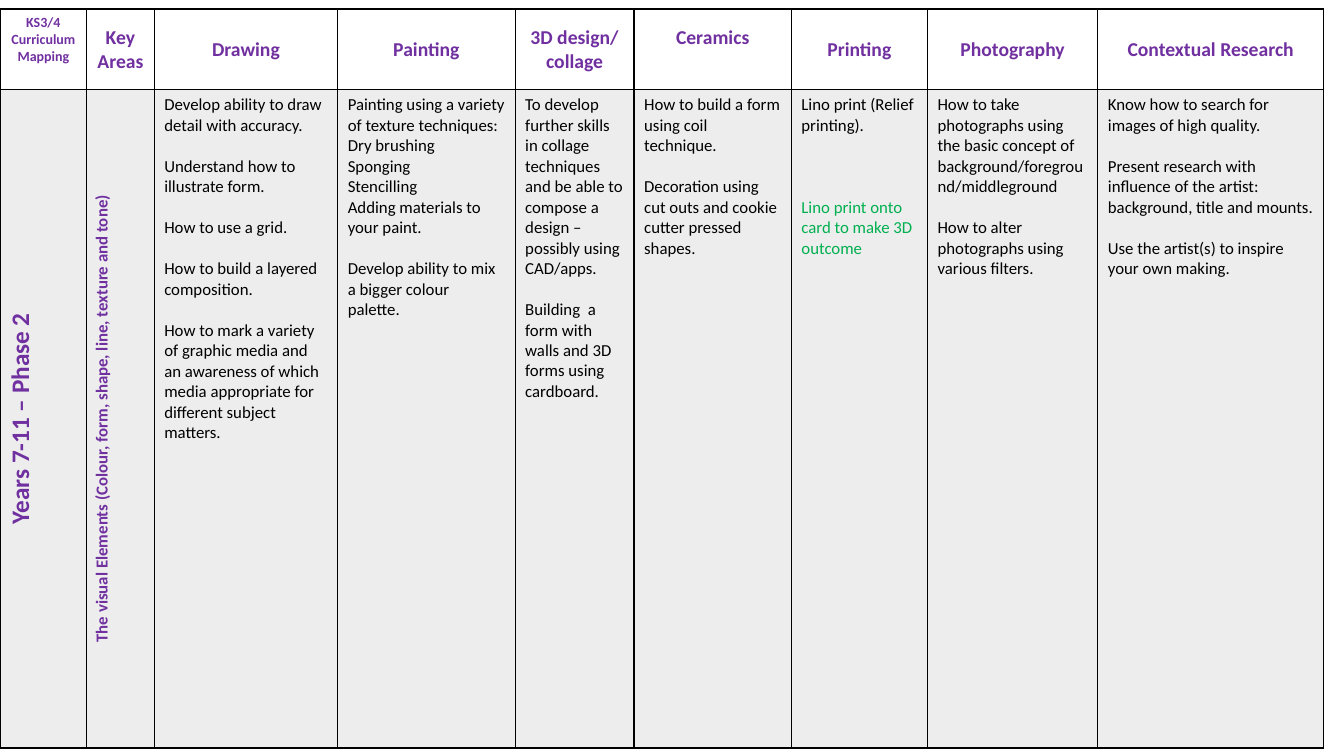
from dataclasses import dataclass

from lxml import etree
from pptx import Presentation
from pptx import util as u
from pptx.dml.color import RGBColor
from pptx.enum import text
from pptx.oxml import ns


@dataclass(frozen=True)
class Theme:
    font: str = "Calibri"
    heading: str = "7030A0"
    body: str = "000000"
    extension: str = "00B050"
    shade: str = "A5A5A5"
    shade_alpha: int = 20
    border: str = "000000"
    border_width: float = 1
    corner_size: int = 10
    body_size: int = 12
    area_size: int = 14
    phase_size: int = 18
    line_gap: float = 14.65


THEME = Theme()

COLUMN_WIDTHS = [0.86, 0.67, 1.82, 1.76, 1.18, 1.56, 1.35, 1.69, 2.24]
ROW_HEIGHTS = [0.8, 6.53]

CORNER = "KS3/4 Curriculum Mapping"
HEADINGS = ["Key Areas", "Drawing", "Painting", "3D design/ collage", "Ceramics",
            "Printing", "Photography", "Contextual Research"]
PHASE = "Years 7-11 – Phase 2"
VISUAL_ELEMENTS = "The visual Elements (Colour, form, shape, line, texture and tone)"

# One list per area; each inner list is a group of lines set apart by a gap
SKILLS = [
    [["Develop ability to draw detail with accuracy."],
     ["Understand how to illustrate form."],
     ["How to use a grid."],
     ["How to build a layered composition."],
     ["How to mark a variety of graphic media and an awareness of which media "
      "appropriate for different subject matters."]],
    [["Painting using a variety of texture techniques:", "Dry brushing", "Sponging",
      "Stencilling", "Adding materials to your paint."],
     ["Develop ability to mix a bigger colour palette."]],
    [["To develop further skills in collage techniques and be able to compose a "
      "design – possibly using CAD/apps."],
     ["Building  a form with walls and 3D forms using cardboard."]],
    [["How to build a form using coil technique."],
     ["Decoration using cut outs and cookie cutter pressed shapes."]],
    [["Lino print (Relief printing)."]],
    [["How to take photographs using the basic concept of "
      "background/foreground/middleground"],
     ["How to alter photographs using various filters."]],
    [["Know how to search for images of high quality."],
     ["Present research with influence of the artist: background, title and mounts."],
     ["Use the artist(s) to inspire your own making."]],
]
PRINTING_EXTENSION = "Lino print onto card to make 3D outcome"


def write_line(cell, words, size, color, bold=False, centred=False, gap=0):
    """Fill the cell's first paragraph, or add one below its text."""
    frame = cell.text_frame
    line = frame.add_paragraph() if frame.text else frame.paragraphs[0]
    line.alignment = text.PP_ALIGN.CENTER if centred else text.PP_ALIGN.LEFT
    line.space_before = u.Pt(gap)
    run = line.add_run()
    run.text = words
    run.font.name = THEME.font
    run.font.size = u.Pt(size)
    run.font.bold = bold
    run.font.color.rgb = RGBColor.from_string(color)


def write_heading(cell, words, size, anchor=text.MSO_ANCHOR.MIDDLE):
    cell.vertical_anchor = anchor
    write_line(cell, words, size, THEME.heading, bold=True, centred=True)


def write_sideways(cell, words, size):
    write_heading(cell, words, size)
    cell._tc.get_or_add_tcPr().set("vert", "vert270")


def write_skills(cell, groups):
    for group_index, group in enumerate(groups):
        for line_index, words in enumerate(group):
            starts_group = group_index > 0 and line_index == 0
            write_line(cell, words, THEME.body_size, THEME.body,
                       gap=THEME.line_gap if starts_group else 0)


def shade(cell):
    cell.fill.solid()
    cell.fill.fore_color.rgb = RGBColor.from_string(THEME.shade)
    color = cell._tc.tcPr.find(".//" + ns.qn("a:srgbClr"))
    etree.SubElement(color, ns.qn("a:alpha"), val=str(THEME.shade_alpha * 1000))


def outline(cell):
    properties = cell._tc.get_or_add_tcPr()
    for position, side in enumerate(["lnL", "lnR", "lnT", "lnB"]):
        edge = etree.Element(ns.qn("a:" + side), w=str(u.Pt(THEME.border_width)))
        fill = etree.SubElement(edge, ns.qn("a:solidFill"))
        etree.SubElement(fill, ns.qn("a:srgbClr"), val=THEME.border)
        properties.insert(position, edge)


def add_grid(slide):
    grid = slide.shapes.add_table(
        len(ROW_HEIGHTS), len(COLUMN_WIDTHS), u.Inches(0), u.Inches(0.09),
        u.Inches(sum(COLUMN_WIDTHS)), u.Inches(sum(ROW_HEIGHTS))).table
    grid.first_row = grid.horz_banding = False
    for column, width in zip(grid.columns, COLUMN_WIDTHS):
        column.width = u.Inches(width)
    for row, height in zip(grid.rows, ROW_HEIGHTS):
        row.height = u.Inches(height)
    for column in range(len(COLUMN_WIDTHS)):
        grid.cell(0, column).fill.background()
        shade(grid.cell(1, column))
    for cell in grid.iter_cells():
        outline(cell)
    return grid


def main():
    deck = Presentation()
    deck.slide_width, deck.slide_height = u.Inches(13.33), u.Inches(7.5)
    slide = deck.slides.add_slide(deck.slide_layouts[6])
    curriculum = add_grid(slide)

    # Heading row
    write_heading(curriculum.cell(0, 0), CORNER, THEME.corner_size, text.MSO_ANCHOR.TOP)
    for column, heading in enumerate(HEADINGS, start=1):
        write_heading(curriculum.cell(0, column), heading, THEME.area_size)
    ceramics = curriculum.cell(0, 1 + HEADINGS.index("Ceramics"))
    ceramics.margin_bottom = u.Inches(0.28)

    # Sideways row labels
    write_sideways(curriculum.cell(1, 0), PHASE, THEME.phase_size)
    write_sideways(curriculum.cell(1, 1), VISUAL_ELEMENTS, THEME.body_size)

    # Skills in each area
    for column, groups in enumerate(SKILLS, start=2):
        write_skills(curriculum.cell(1, column), groups)
    printing = curriculum.cell(1, 1 + HEADINGS.index("Printing"))
    write_line(printing, PRINTING_EXTENSION, THEME.body_size, THEME.extension,
               gap=3 * THEME.line_gap)

    deck.save("out.pptx")


if __name__ == "__main__":
    main()
